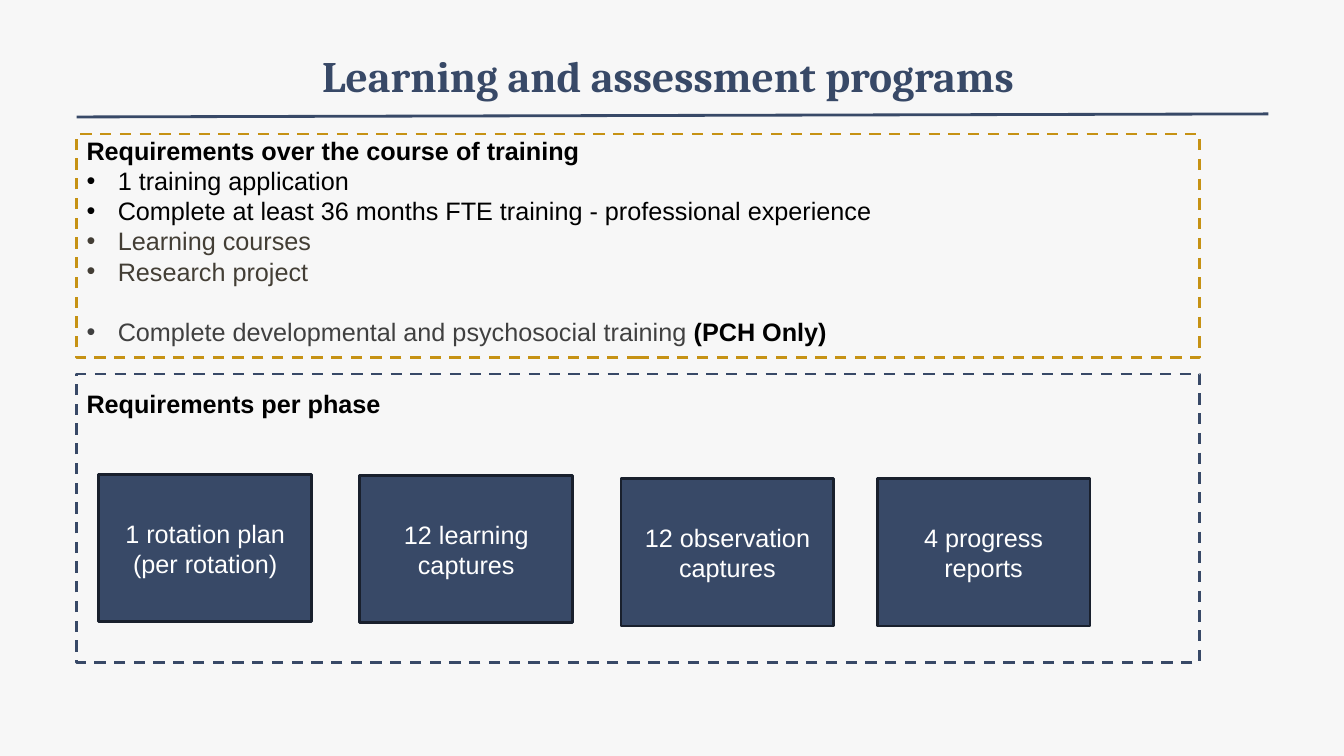
from dataclasses import dataclass
from lxml.etree import SubElement
from pptx import Presentation
from pptx.dml.color import RGBColor as Rgb
from pptx.enum.dml import MSO_LINE as Dash
from pptx.enum.shapes import MSO_CONNECTOR as Conn, MSO_SHAPE as Form
from pptx.enum.text import MSO_ANCHOR as Anchor, MSO_AUTO_SIZE as Fit, PP_ALIGN as Align
from pptx.oxml.ns import qn
from pptx.util import Inches, Pt


@dataclass(frozen=True)
class Theme:
    """Colours, fonts and sizes of the slide."""
    back: str = "F7F7F7"
    navy: str = "384967"
    edge: str = "19202D"
    gold: str = "C69214"
    black: str = "000000"
    brown: str = "433E35"
    gray: str = "404040"
    white: str = "FFFFFF"
    head: str = "Cambria"
    body: str = "Arial"
    big: float = 31
    text: float = 18
    rule: float = 2


def apply(item, values):
    """Set each named value on the item."""
    for name, value in values.items():
        setattr(item, name, value)


class Page:
    """Draws on one slide, with lengths in percent of its size."""

    def __init__(self, deck, theme):
        """Add a title-only slide with a plain background."""
        self.deck, self.theme = deck, theme
        self.slide = deck.slides.add_slide(deck.slide_layouts[5])
        fill = self.slide.background.fill
        fill.solid()
        fill.fore_color.rgb = Rgb.from_string(theme.back)

    def span(self, *shares):
        """Turn x, y, x, y shares into slide lengths."""
        sides = (self.deck.slide_width, self.deck.slide_height) * 2
        return [int(side * share / 100) for side, share in zip(sides, shares)]

    def run(self, para, text, color, bold=False, size=None, face=None):
        """Add one styled run to a paragraph."""
        part = para.add_run()
        part.text = text
        apply(part.font, {"size": Pt(size or self.theme.text), "bold": bold,
                          "name": face or self.theme.body})
        part.font.color.rgb = Rgb.from_string(color)

    def stroke(self, line, color):
        """Style an outline."""
        line.color.rgb = Rgb.from_string(color)
        line.width = Pt(self.theme.rule)

    def title(self, text, *area):
        """Place and fill the title."""
        shape = self.slide.shapes.title
        apply(shape, dict(zip(("left", "top", "width", "height"), self.span(*area))))
        side, edge = Inches(0.07), Inches(0.04)
        apply(shape.text_frame, {
            "margin_left": side, "margin_right": side, "margin_top": edge,
            "margin_bottom": edge, "vertical_anchor": Anchor.MIDDLE,
            "word_wrap": True, "auto_size": Fit.NONE})
        para = shape.text_frame.paragraphs[0]
        para.alignment = Align.CENTER
        self.run(para, text, self.theme.navy, True, self.theme.big, self.theme.head)

    def rule(self, *ends):
        """Draw a straight line."""
        line = self.slide.shapes.add_connector(Conn.STRAIGHT, *self.span(*ends))
        self.stroke(line.line, self.theme.navy)
        SubElement(line._element.spPr, qn("a:effectLst"))

    def box(self, edge, *area):
        """Draw a rectangle with an outline."""
        shape = self.slide.shapes.add_shape(Form.RECTANGLE, *self.span(*area))
        shape.shadow.inherit = False
        self.stroke(shape.line, edge)
        return shape

    def frame(self, color, *area):
        """Draw an empty dashed frame."""
        shape = self.box(color, *area)
        shape.fill.background()
        shape.line.dash_style = Dash.DASH

    def card(self, text, *area):
        """Draw a filled card with centred text."""
        shape = self.box(self.theme.edge, *area)
        shape.fill.solid()
        shape.fill.fore_color.rgb = Rgb.from_string(self.theme.navy)
        apply(shape.text_frame, {"word_wrap": True, "vertical_anchor": Anchor.MIDDLE})
        para = shape.text_frame.paragraphs[0]
        para.alignment = Align.CENTER
        self.run(para, text, self.theme.white)

    def notes(self, head, items, *area):
        """Write a bold heading and its bullets."""
        frame = self.slide.shapes.add_textbox(*self.span(*area)).text_frame
        apply(frame, {"word_wrap": True, "auto_size": Fit.SHAPE_TO_FIT_TEXT})
        self.run(frame.paragraphs[0], head, self.theme.black, True)
        for gap, runs in items:
            para = frame.add_paragraph()
            para.space_before = Pt(gap)
            props = para._p.get_or_add_pPr()
            indent = Inches(0.31)
            props.set("marL", str(indent))
            props.set("indent", str(-indent))
            SubElement(props, qn("a:buFont"), typeface=self.theme.body)
            SubElement(props, qn("a:buChar"), char="•")
            for part in runs:
                self.run(para, *part)


def main():
    """Build and save the slide."""
    deck, theme = Presentation(), Theme()
    apply(deck, {"slide_width": Inches(13.33), "slide_height": Inches(7.5)})
    page = Page(deck, theme)
    left, wide = 5.7, 83.57
    page.title("Learning and assessment programs", 12.15, 3.87, 75.1, 12.13)
    page.rule(left, 15.47, 94.37, 15.07)
    page.frame(theme.gold, left, 17.73, wide, 29.6)
    page.notes("Requirements over the course of training", [
        (0, [("1 training application", theme.black)]),
        (0, [("Complete at least 36 months FTE training - professional experience",
              theme.black)]),
        (0, [("Learning courses", theme.brown)]),
        (0, [("Research project", theme.brown)]),
        (21.6, [("Complete developmental and psychosocial training ", theme.gray),
                ("(PCH Only)", theme.black, True)]),
    ], left, 17.2, 73.8, 33.6)
    page.frame(theme.navy, left, 49.47, wide, 38.13)
    page.notes("Requirements per phase", [], left, 50.67, 50, 5.33)
    cards = [("1 rotation plan (per rotation)", 7.35, 62.8),
             ("12 learning captures", 26.78, 62.93),
             ("12 observation captures", 46.21, 63.33),
             ("4 progress reports", 65.27, 63.33)]
    for text, x, y in cards:
        page.card(text, x, y, 15.83, 19.47)
    deck.save("out.pptx")


if __name__ == "__main__":
    main()
